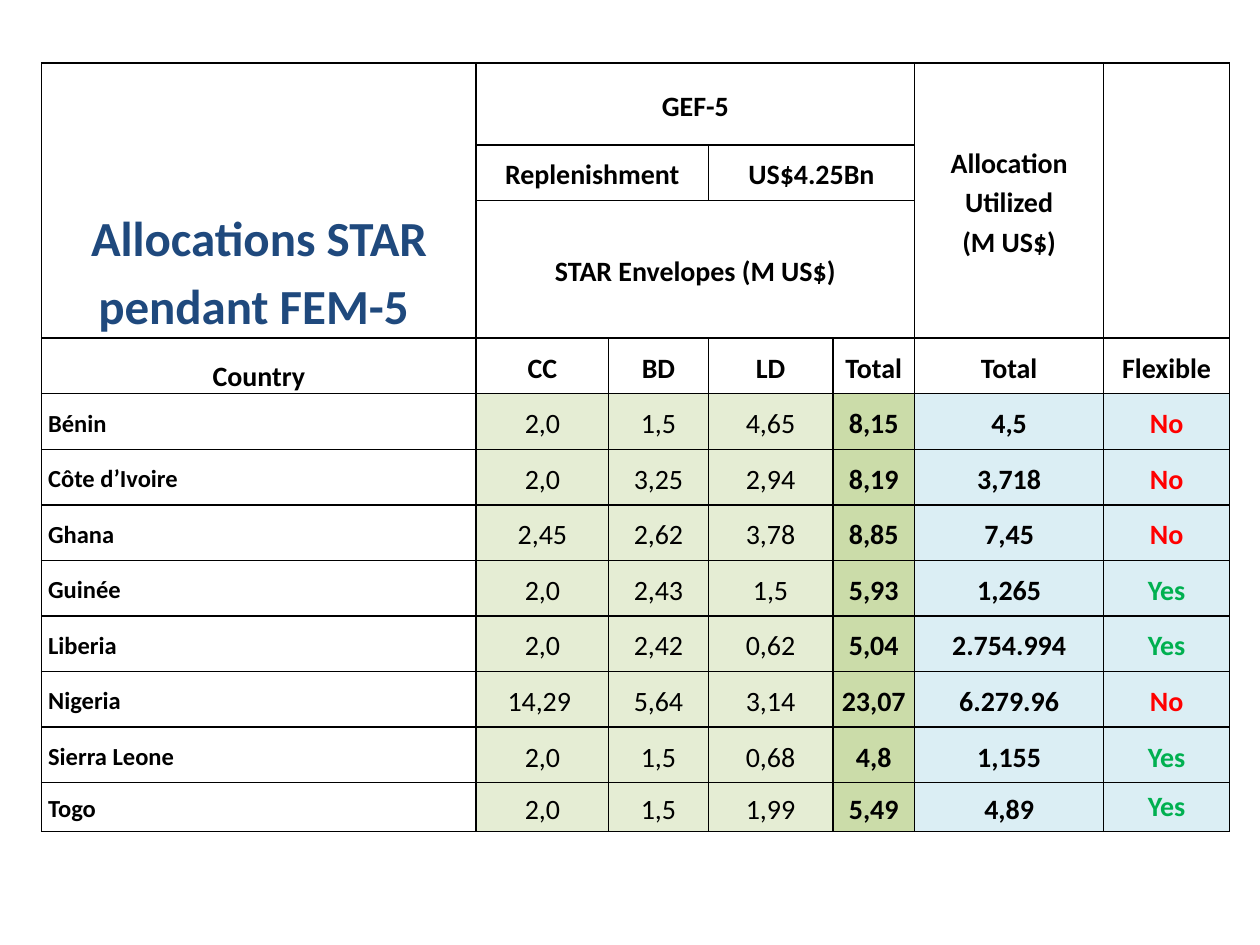
"""Build the slide on STAR allocations during FEM-5 as one table."""
from dataclasses import dataclass
from typing import NamedTuple

from lxml.etree import SubElement
from pptx import Presentation
from pptx.dml.color import RGBColor
from pptx.enum.text import MSO_ANCHOR, PP_ALIGN
from pptx.oxml.ns import qn
from pptx.table import Table, _Cell
from pptx.util import Cm, Pt


@dataclass(frozen=True)
class Theme:
    """Hold the colours and type sizes of the slide."""
    font: str = "Calibri"
    title_size: int = 28
    value_size: int = 16
    country_size: int = 14
    ink: str = "000000"
    title: str = "1F497D"
    no: str = "FF0000"
    yes: str = "00B050"
    paper: str = "FFFFFF"
    envelope: str = "E5EDD4"
    envelope_total: str = "CBDCA9"
    utilized: str = "DBEEF4"


THEME = Theme()


@dataclass(frozen=True)
class CellStyle:
    """Describe how the text of a table cell looks."""
    fill: str = THEME.paper
    color: str = THEME.ink
    size: int = THEME.value_size
    bold: bool = True
    align: PP_ALIGN = PP_ALIGN.CENTER
    anchor: MSO_ANCHOR = MSO_ANCHOR.MIDDLE
    spacing: float = 1.15


class Header(NamedTuple):
    """Place one heading over the rows and columns it spans."""
    row: int
    column: int
    row_span: int
    column_span: int
    text: str
    style: CellStyle = CellStyle()


class Allocation(NamedTuple):
    """Give the allocation figures of one country."""
    country: str
    climate: str
    biodiversity: str
    land: str
    envelope_total: str
    utilized: str
    flexible: str


HEADERS = [
    Header(0, 0, 3, 1, "Allocations STAR pendant FEM-5 ",
           CellStyle(color=THEME.title, size=THEME.title_size, anchor=MSO_ANCHOR.BOTTOM)),
    Header(0, 1, 1, 4, "GEF-5"),
    Header(0, 5, 3, 1, "Allocation Utilized\n(M US$)"),
    Header(0, 6, 3, 1, ""),
    Header(1, 1, 1, 2, "Replenishment"),
    Header(1, 3, 1, 2, "US$4.25Bn"),
    Header(2, 1, 1, 4, "STAR Envelopes (M US$)"),
    Header(3, 0, 1, 1, "Country", CellStyle(anchor=MSO_ANCHOR.BOTTOM)),
    *(Header(3, column, 1, 1, label) for column, label in
      enumerate(["CC", "BD", "LD", "Total", "Total", "Flexible"], start=1)),
]
ALLOCATIONS = [
    Allocation("Bénin", "2,0", "1,5", "4,65", "8,15", "4,5", "No"),
    Allocation("Côte d’Ivoire", "2,0", "3,25", "2,94", "8,19", "3,718", "No"),
    Allocation("Ghana", "2,45", "2,62", "3,78", "8,85", "7,45", "No"),
    Allocation("Guinée", "2,0", "2,43", "1,5", "5,93", "1,265", "Yes"),
    Allocation("Liberia", "2,0", "2,42", "0,62", "5,04", "2.754.994", "Yes"),
    Allocation("Nigeria", "14,29 ", "5,64", "3,14", "23,07", "6.279.96", "No"),
    Allocation("Sierra Leone", "2,0", "1,5", "0,68", "4,8", "1,155", "Yes"),
    Allocation("Togo", "2,0", "1,5", "1,99", "5,49", "4,89", "Yes"),
]
FIRST_COUNTRY_ROW = 4
COLUMN_WIDTHS = [8.76, 2.67, 2.01, 2.51, 1.65, 3.81, 2.54]
ROW_HEIGHTS = [1.65, 1.12, 1.27] + [1.12] * len(ALLOCATIONS) + [0.99]


def set_all(target: object, values: dict) -> None:
    """Set every attribute named in the format values."""
    for attribute, value in values.items():
        setattr(target, attribute, value)


def draw_frame(cell: _Cell) -> None:
    """Draw thin borders around a cell and fill it with paper colour."""
    properties = cell._tc.get_or_add_tcPr()
    for side in ("lnL", "lnR", "lnT", "lnB"):
        border = SubElement(properties, qn(f"a:{side}"), w=str(Pt(1)))
        SubElement(SubElement(border, qn("a:solidFill")), qn("a:srgbClr"), val=THEME.ink)
    cell.fill.solid()
    cell.fill.fore_color.rgb = RGBColor.from_string(THEME.paper)


def write_cell(cell: _Cell, text: str, style: CellStyle) -> None:
    """Write styled text into a cell."""
    set_all(cell, {"margin_left": Cm(0.13), "margin_right": Cm(0.13), "margin_top": 0,
                   "margin_bottom": 0, "vertical_anchor": style.anchor})
    cell.fill.fore_color.rgb = RGBColor.from_string(style.fill)
    cell.text_frame.text = text
    for paragraph in cell.text_frame.paragraphs:
        set_all(paragraph, {"alignment": style.align, "line_spacing": style.spacing})
        for run in paragraph.runs:
            set_all(run.font, {"name": THEME.font, "size": Pt(style.size), "bold": style.bold})
            run.font.color.rgb = RGBColor.from_string(style.color)


def draw_header(table: Table, header: Header) -> None:
    """Merge the spanned cells of a heading and write it."""
    heading = table.cell(header.row, header.column)
    if header.row_span * header.column_span > 1:
        heading.merge(table.cell(header.row + header.row_span - 1,
                                 header.column + header.column_span - 1))
    write_cell(heading, header.text, header.style)


def allocation_styles(allocation: Allocation, is_last: bool) -> list[CellStyle]:
    """Return the styles of a country row from left to right."""
    envelope = CellStyle(fill=THEME.envelope, bold=False)
    return [
        CellStyle(size=THEME.country_size, align=PP_ALIGN.LEFT),
        envelope, envelope, envelope,
        CellStyle(fill=THEME.envelope_total),
        CellStyle(fill=THEME.utilized),
        CellStyle(fill=THEME.utilized, spacing=1.0 if is_last else 1.15,
                  color=THEME.yes if allocation.flexible == "Yes" else THEME.no),
    ]


def draw_allocation(table: Table, row: int, allocation: Allocation) -> None:
    """Write the figures of one country into its row."""
    styles = allocation_styles(allocation, row == len(ROW_HEIGHTS) - 1)
    for column, (text, style) in enumerate(zip(allocation, styles)):
        write_cell(table.cell(row, column), text, style)


def main() -> None:
    """Build and save the presentation."""
    presentation = Presentation()
    set_all(presentation, {"slide_width": Cm(25.4), "slide_height": Cm(19.05)})
    slide = presentation.slides.add_slide(presentation.slide_layouts[6])
    allocations = slide.shapes.add_table(
        len(ROW_HEIGHTS), len(COLUMN_WIDTHS), Cm(0.84), Cm(1.27),
        Cm(sum(COLUMN_WIDTHS)), Cm(sum(ROW_HEIGHTS))).table
    set_all(allocations, {"first_row": False, "horz_banding": False})
    for column, width in zip(allocations.columns, COLUMN_WIDTHS):
        column.width = Cm(width)
    for row, height in zip(allocations.rows, ROW_HEIGHTS):
        row.height = Cm(height)
    for cell in allocations.iter_cells():
        draw_frame(cell)
    for header in HEADERS:
        draw_header(allocations, header)
    for row, allocation in enumerate(ALLOCATIONS, start=FIRST_COUNTRY_ROW):
        draw_allocation(allocations, row, allocation)
    presentation.save("out.pptx")


if __name__ == "__main__":
    main()
